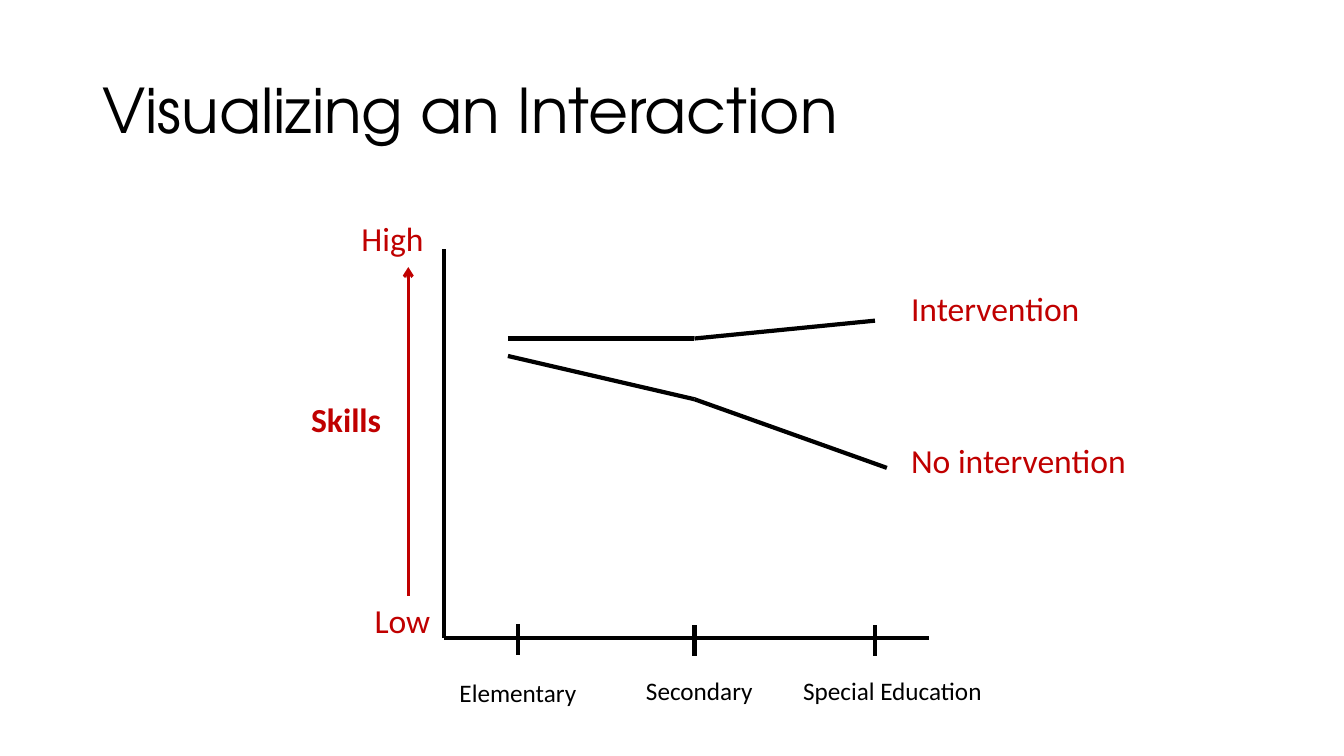
from pptx import Presentation
from pptx.dml.color import RGBColor
from pptx.enum.shapes import MSO_CONNECTOR
from pptx.enum.text import MSO_ANCHOR
from pptx.oxml.ns import qn
from pptx.util import Cm, Pt
from lxml.etree import SubElement

BLACK, RED = "000000", "C00000"

prs = Presentation()
prs.slide_width, prs.slide_height = Cm(33.87), Cm(19.05)
s = prs.slides.add_slide(prs.slide_layouts[6])


def add_text(text, left, top, width, height, size=24, color=RED, font="Calibri",
             bold=False, anchor=MSO_ANCHOR.TOP, spacing=1.0):
    tf = s.shapes.add_textbox(Cm(left), Cm(top), Cm(width), Cm(height)).text_frame
    tf.word_wrap = True
    tf.vertical_anchor = anchor
    p = tf.paragraphs[0]
    p.line_spacing = spacing
    r = p.add_run()
    r.text = text
    r.font.name, r.font.size, r.font.bold = font, Pt(size), bold
    r.font.color.rgb = RGBColor.from_string(color)


def add_line(x1, y1, x2, y2, color=BLACK, width=3, arrow=False):
    sp = s.shapes.add_connector(MSO_CONNECTOR.STRAIGHT, Cm(x1), Cm(y1), Cm(x2), Cm(y2))
    sp.line.color.rgb = RGBColor.from_string(color)
    sp.line.width = Pt(width)
    if arrow:
        SubElement(sp.line._get_or_add_ln(), qn("a:tailEnd"), type="arrow")
    SubElement(sp._element.spPr, qn("a:effectLst"))


add_text("Visualizing an Interaction", 2.33, 1.01, 29.21, 3.68, size=44, color=BLACK,
         font="TeX Gyre Adventor", anchor=MSO_ANCHOR.MIDDLE, spacing=0.9)

axis_x, axis_y = 11.18, 16.08
add_line(axis_x, axis_y, 23.42, axis_y)
add_line(axis_x, axis_y, axis_x, 6.27)

categories = [
    ("Elementary", 13.06, 15.72, 11.33, 16.94, 3.89),
    ("Secondary", 17.5, 15.75, 16.03, 16.89, 3.96),
    ("Special Education", 22.05, 15.75, 19.99, 16.89, 5.33),
]
for name, tick_x, tick_y, left, top, width in categories:
    add_line(tick_x, tick_y, tick_x, tick_y + 0.79)
    add_text(name, left, top, width, 1.02, size=18, color=BLACK)

series = [
    ("Intervention", 7.14, [(12.8, 8.53), (17.5, 8.53), (22.05, 8.08)]),
    ("No intervention", 10.95, [(12.8, 8.97), (17.5, 10.06), (22.35, 11.79)]),
]
for name, top, points in series:
    for start, end in zip(points, points[1:]):
        add_line(*start, *end)
    add_text(name, 22.71, top, 6.12, 1.27)

add_line(10.29, 15.01, 10.29, 6.73, color=RED, width=2.25, arrow=True)
add_text("Skills", 7.59, 9.93, 2.9, 1.27, bold=True)
add_text("Low", 9.19, 14.99, 2.03, 1.27)
add_text("High", 8.86, 5.36, 2.39, 1.27)

prs.save("out.pptx")
